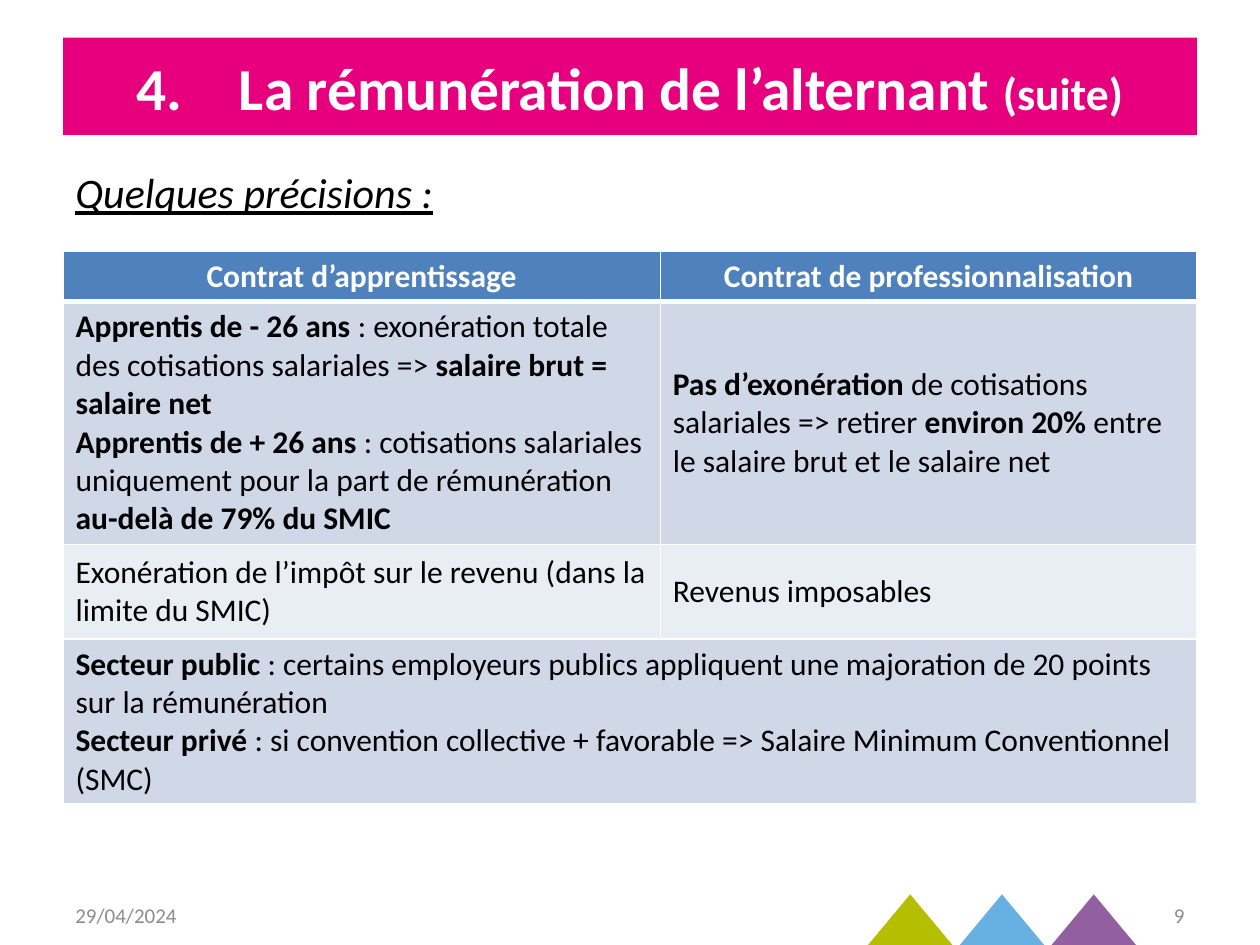
from lxml.etree import SubElement
from pptx import Presentation
from pptx.dml.color import RGBColor
from pptx.enum.shapes import MSO_SHAPE
from pptx.enum.text import MSO_ANCHOR, MSO_AUTO_SIZE, PP_ALIGN
from pptx.oxml.ns import qn
from pptx.util import Cm, Pt

WHITE = RGBColor(0xFF, 0xFF, 0xFF)
BLACK = RGBColor(0x00, 0x00, 0x00)
GREY = RGBColor(0x8C, 0x8C, 0x8C)
PINK = RGBColor(0xE6, 0x00, 0x7E)
BLUE = RGBColor(0x4F, 0x81, 0xBD)
BAND_DARK = RGBColor(0xD0, 0xD8, 0xE8)
BAND_LIGHT = RGBColor(0xE9, 0xED, 0xF4)
GREEN = RGBColor(0xB5, 0xBE, 0x00)
SKY = RGBColor(0x67, 0xB0, 0xE2)
PURPLE = RGBColor(0x92, 0x60, 0xA0)

HEADERS = ["Contrat d’apprentissage", "Contrat de professionnalisation"]
# Text between ** marks is bold; each list item is a paragraph.
BODY_ROWS = [
    [["**Apprentis de - 26 ans **: exonération totale des cotisations salariales => "
      "**salaire brut = salaire net**",
      "**Apprentis de + 26 ans **: cotisations salariales uniquement pour la part de "
      "rémunération **au-delà de 79% du SMIC**"],
     ["**Pas d’exonération **de cotisations salariales => retirer **environ 20% **"
      "entre le salaire brut et le salaire net"]],
    [["Exonération de l’impôt sur le revenu (dans la limite du SMIC)"],
     ["Revenus imposables"]],
    [["**Secteur public **: certains employeurs publics appliquent une majoration "
      "de 20 points sur la rémunération",
      "**Secteur privé **: si convention collective + favorable => Salaire Minimum "
      "Conventionnel (SMC)"]],
]
COLUMN_WIDTHS = [12.04, 10.82]
ROW_HEIGHTS = [1, 4.9, 1.9, 3.33]


class SlideBuilder:
    def __init__(self, deck, font="Calibri"):
        self.font = font
        self.page = deck.slides.add_slide(deck.slide_layouts[5])

    def span(self, para, text, **style):
        run = para.add_run()
        run.text = text
        color = style.pop("color", BLACK)
        for name, value in {"name": self.font, **style}.items():
            setattr(run.font, name, value)
        run.font.color.rgb = color

    def title(self, number, parts, left, top, width, height):
        box = self.page.shapes.title
        geometry = {"left": left, "top": top, "width": width, "height": height}
        for name, value in geometry.items():
            setattr(box, name, Cm(value))
        box.fill.solid()
        box.fill.fore_color.rgb = PINK
        frame = box.text_frame
        frame.auto_size = MSO_AUTO_SIZE.NONE
        frame.vertical_anchor = MSO_ANCHOR.MIDDLE
        para = frame.paragraphs[0]
        para.alignment = PP_ALIGN.CENTER
        for text, size in parts:
            self.span(para, text, size=Pt(size), bold=True, color=WHITE)
        properties = para._p.get_or_add_pPr()
        properties.set("marL", str(Cm(2.06)))
        properties.set("indent", str(-Cm(2.06)))
        SubElement(properties, qn("a:buFont"), typeface="+mj-lt")
        SubElement(properties, qn("a:buAutoNum"), type="arabicPeriod", startAt=str(number))

    def text(self, text, left, top, width, height, anchor=MSO_ANCHOR.MIDDLE,
             align=PP_ALIGN.LEFT, before=0, **style):
        box = self.page.shapes.add_textbox(Cm(left), Cm(top), Cm(width), Cm(height))
        frame = box.text_frame
        frame.word_wrap = True
        frame.vertical_anchor = anchor
        para = frame.paragraphs[0]
        para.alignment = align
        para.space_before = Pt(before)
        self.span(para, text, **style)

    def triangle(self, left, top, width, height, color):
        shape = self.page.shapes.add_shape(
            MSO_SHAPE.ISOSCELES_TRIANGLE, Cm(left), Cm(top), Cm(width), Cm(height))
        shape.shadow.inherit = False
        shape.fill.solid()
        shape.fill.fore_color.rgb = color
        shape.line.fill.background()

    def cell(self, cell, paragraphs, fill, color=BLACK, align=PP_ALIGN.LEFT,
             top=1, bottom=1):
        cell.vertical_anchor = MSO_ANCHOR.MIDDLE
        frame = cell.text_frame
        for index, text in enumerate(paragraphs):
            para = frame.add_paragraph() if index else frame.paragraphs[0]
            para.alignment = align
            for part, words in enumerate(text.split("**")):
                if words:
                    self.span(para, words, size=Pt(18), bold=part % 2 == 1, color=color)
        properties = cell._tc.get_or_add_tcPr()
        for side, width in {"lnL": 1, "lnR": 1, "lnT": top, "lnB": bottom}.items():
            line = SubElement(properties, qn(f"a:{side}"), w=str(Pt(width)))
            paint = SubElement(line, qn("a:solidFill"))
            SubElement(paint, qn("a:srgbClr"), val=str(WHITE))
        cell.fill.solid()
        cell.fill.fore_color.rgb = fill

    def table(self, left, top):
        grid = self.page.shapes.add_table(
            len(ROW_HEIGHTS), len(COLUMN_WIDTHS), Cm(left), Cm(top),
            Cm(sum(COLUMN_WIDTHS)), Cm(sum(ROW_HEIGHTS))).table
        for column, width in zip(grid.columns, COLUMN_WIDTHS):
            column.width = Cm(width)
        for row, height in zip(grid.rows, ROW_HEIGHTS):
            row.height = Cm(height)
        for column, header in enumerate(HEADERS):
            self.cell(grid.cell(0, column), [f"**{header}**"], BLUE, WHITE,
                      PP_ALIGN.CENTER, bottom=3)
        for row, contents in enumerate(BODY_ROWS, 1):
            fill = BAND_DARK if row % 2 else BAND_LIGHT
            if len(contents) == 1:
                grid.cell(row, 0).merge(grid.cell(row, 1))
            for column, paragraphs in enumerate(contents):
                self.cell(grid.cell(row, column), paragraphs, fill,
                          top=3 if row == 1 else 1)


def main():
    deck = Presentation()
    deck.slide_width, deck.slide_height = Cm(25.4), Cm(19.05)
    slide = SlideBuilder(deck)
    for index, color in enumerate([GREEN, SKY, PURPLE]):
        slide.triangle(17.5 + index * 1.85, 18.03, 1.7, 1.02, color)
    slide.title(4, [("La rémunération de l’alternant ", 34), ("(suite)", 26)],
                1.27, 0.76, 22.86, 1.96)
    slide.text("Quelques précisions :", 1.27, 3.23, 23.24, 14.7, MSO_ANCHOR.TOP,
               before=4.8, size=Pt(24), italic=True, underline=True)
    footer = {"size": Pt(12), "color": GREY}
    slide.text("29/04/2024", 1.27, 17.93, 2.82, 1.02, **footer)
    slide.text("9", 22.91, 17.93, 1.22, 1.02, align=PP_ALIGN.RIGHT, **footer)
    slide.table(1.27, 5.06)
    deck.save("out.pptx")


if __name__ == "__main__":
    main()
